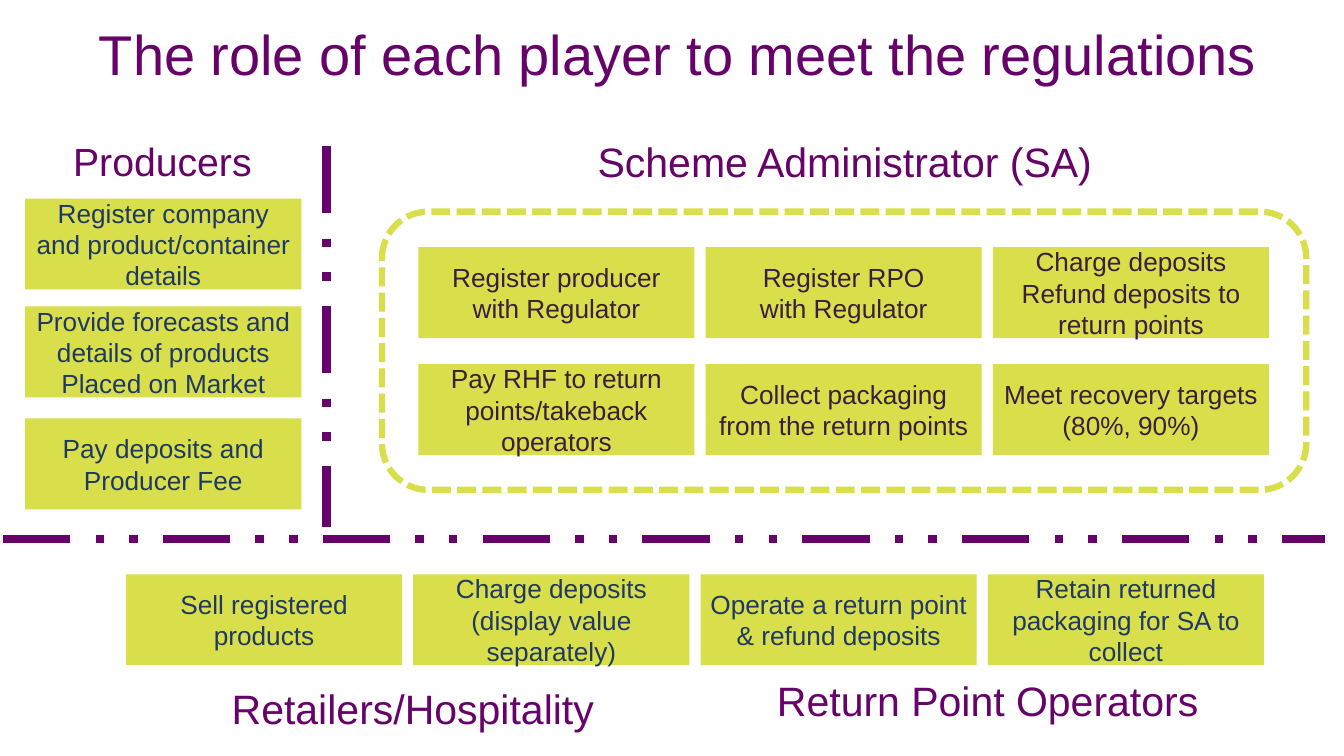
from lxml import etree
from pptx import Presentation
from pptx.dml.color import RGBColor
from pptx.enum.dml import MSO_LINE
from pptx.enum.shapes import MSO_CONNECTOR, MSO_SHAPE
from pptx.enum.text import MSO_ANCHOR, PP_ALIGN
from pptx.oxml.ns import qn
from pptx.util import Pt

RECT, ROUNDED = MSO_SHAPE.RECTANGLE, MSO_SHAPE.ROUNDED_RECTANGLE
STRAIGHT = MSO_CONNECTOR.STRAIGHT
MIDDLE, BOTTOM = MSO_ANCHOR.MIDDLE, MSO_ANCHOR.BOTTOM
CENTER = PP_ALIGN.CENTER
DIVIDER_DASH, FRAME_DASH = MSO_LINE.DASH_DOT_DOT, MSO_LINE.SQUARE_DOT

COLORS = {"purple": "660269", "lime": "D8DF4B", "plum": "3A1E3C", "navy": "203864"}

TITLE = "The role of each player to meet the regulations"
HEADINGS = [
    ("Producers", 38.2, 95, 155.5, 40.3, 28),
    ("Scheme Administrator (SA)", 398.2, 87.1, 410.4, 55.4, 29.3),
    ("Retailers/Hospitality", 143.3, 485.3, 303.1, 40.3, 29.3),
    ("Return Point Operators", 530.6, 480.2, 349.9, 40.3, 29.3),
]
PRODUCER_TASKS = [
    ("Register company and product/container details", 141.8),
    ("Provide forecasts and details of products Placed on Market", 218.9),
    ("Pay deposits and Producer Fee", 298.8),
]
ADMIN_TASKS = [
    ["Register producer with Regulator",
     "Register RPO\nwith Regulator",
     "Charge deposits\nRefund deposits to return points"],
    ["Pay RHF to return points/takeback operators",
     "Collect packaging from the return points",
     "Meet recovery targets\n(80%, 90%)"],
]
RETURN_TASKS = [
    "Sell registered products",
    "Charge deposits (display value separately)",
    "Operate a return point & refund deposits",
    "Retain returned packaging for SA to collect",
]
DIVIDERS = [(2.2, 385.2, 946.1, 385.2), (233.3, 104.4, 233.3, 376.6)]

TASK_W, TASK_H = 197.3, 65
STEP_X, STEP_Y = 205.2, 83.5
PRODUCER_X = 18
ADMIN_X, ADMIN_Y = 298.8, 176.6
RETURN_X, RETURN_Y = 90, 410.2


def rgb(name):
    return RGBColor.from_string(COLORS[name])


def write(sp, text, size=18.7, color="purple", anchor=MIDDLE):
    tf = sp.text_frame
    tf.word_wrap = True
    tf.vertical_anchor = anchor
    tf.margin_left = tf.margin_right = Pt(6)
    for i, line in enumerate(text.split("\n")):
        p = tf.paragraphs[0] if i == 0 else tf.add_paragraph()
        p.alignment = CENTER
        r = p.add_run()
        r.text = line
        r.font.name = "Arial"
        r.font.size = Pt(size)
        r.font.color.rgb = rgb(color)


def add_label(s, text, x, y, w, h, **fmt):
    write(s.shapes.add_textbox(Pt(x), Pt(y), Pt(w), Pt(h)), text, **fmt)


def add_task(s, text, x, y, color):
    sp = s.shapes.add_shape(RECT, Pt(x), Pt(y), Pt(TASK_W), Pt(TASK_H))
    sp.shadow.inherit = False
    sp.fill.solid()
    sp.fill.fore_color.rgb = rgb("lime")
    sp.line.fill.background()
    write(sp, text, color=color)


def style_line(line, color, width, dash):
    line.color.rgb = rgb(color)
    line.width = Pt(width)
    line.dash_style = dash


def main():
    prs = Presentation()
    prs.slide_width, prs.slide_height = Pt(960), Pt(540)
    s = prs.slides.add_slide(prs.slide_layouts[6])

    frame = s.shapes.add_shape(ROUNDED, Pt(272.9), Pt(151.2), Pt(660.2), Pt(198.7))
    frame.shadow.inherit = False
    frame.fill.background()
    style_line(frame.line, "lime", 4.5, FRAME_DASH)

    add_label(s, TITLE, 5, 10.1, 957.6, 55.4, size=40, anchor=BOTTOM)
    for text, x, y, w, h, size in HEADINGS:
        add_label(s, text, x, y, w, h, size=size)

    for text, y in PRODUCER_TASKS:
        add_task(s, text, PRODUCER_X, y, "navy")
    for row, tasks in enumerate(ADMIN_TASKS):
        for col, text in enumerate(tasks):
            add_task(s, text, ADMIN_X + col * STEP_X, ADMIN_Y + row * STEP_Y, "plum")
    for col, text in enumerate(RETURN_TASKS):
        add_task(s, text, RETURN_X + col * STEP_X, RETURN_Y, "navy")

    for ends in DIVIDERS:
        divider = s.shapes.add_connector(STRAIGHT, *map(Pt, ends))
        style_line(divider.line, "purple", 6, DIVIDER_DASH)
        etree.SubElement(divider.element.spPr, qn("a:effectLst"))

    prs.save("out.pptx")


if __name__ == "__main__":
    main()
